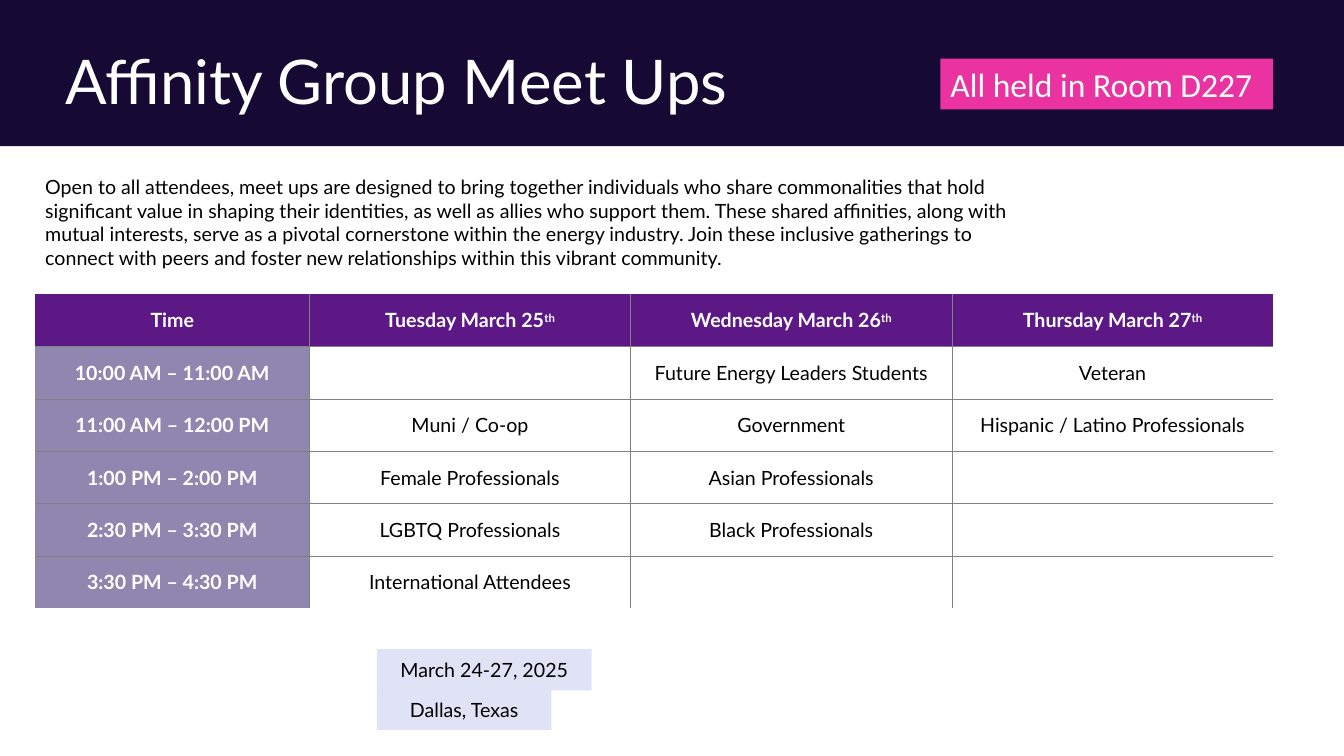
import pptx
import pptx.util
import pptx.dml.color
import pptx.enum.shapes
import pptx.enum.text
import pptx.oxml.ns
from lxml import etree

Pt = pptx.util.Pt
ALIGN = pptx.enum.text.PP_ALIGN
ANCHOR = pptx.enum.text.MSO_ANCHOR

COLORS = {
    "navy": "160A34", "purple": "5C1986", "lavender": "9087B0", "pale": "E0E3F6",
    "pink": "EA32A0", "white": "FFFFFF", "black": "000000", "grid": "808080",
}

TITLE = "Affinity Group Meet Ups"
ROOM = "All held in Room D227"
INTRO = (
    "Open to all attendees, meet ups are designed to bring together individuals who share "
    "commonalities that hold significant value in shaping their identities, as well as allies "
    "who support them. These shared affinities, along with mutual interests, serve as a pivotal "
    "cornerstone within the energy industry. Join these inclusive gatherings to connect with "
    "peers and foster new relationships within this vibrant community."
)
# Each heading is its text and its superscript ending
HEADINGS = [("Time", ""), ("Tuesday March 25", "th"),
            ("Wednesday March 26", "th"), ("Thursday March 27", "th")]
SCHEDULE = [
    ("10:00 AM – 11:00 AM", "", "Future Energy Leaders Students", "Veteran"),
    ("11:00 AM – 12:00 PM", "Muni / Co-op", "Government", "Hispanic / Latino Professionals"),
    ("1:00 PM – 2:00 PM", "Female Professionals", "Asian Professionals", ""),
    ("2:30 PM – 3:30 PM", "LGBTQ Professionals", "Black Professionals", ""),
    ("3:30 PM – 4:30 PM", "International Attendees", "", ""),
]
# Text, left, top, width, height
EVENT_TAGS = [("March 24-27, 2025", 269.3, 463.7, 153.4, 29.5),
              ("Dallas, Texas", 269.3, 491.8, 124.6, 29.5)]

LEFT = 25.2
TABLE_TOP = 210.2
ROW_HEIGHT = 37.4
COLUMN_WIDTHS = [195.8, 229.5, 229.5, 229.5]


def rgb(name):
    return pptx.dml.color.RGBColor.from_string(COLORS[name])


def add_span(para, text, size, color, font="Lato", bold=False, raised=False):
    span = para.add_run()
    span.text = text
    span.font.size = Pt(size)
    span.font.name = font
    span.font.bold = bold
    span.font.color.rgb = rgb(color)
    if raised:
        span.font._element.set("baseline", "30000")


def add_box(page, left, top, width, height, fill):
    box = page.shapes.add_shape(pptx.enum.shapes.MSO_SHAPE.RECTANGLE,
                                Pt(left), Pt(top), Pt(width), Pt(height))
    box.shadow.inherit = False
    box.fill.solid()
    box.fill.fore_color.rgb = rgb(fill)
    box.line.fill.background()
    return box


def write(box, text, size, color, align=ALIGN.LEFT, anchor=ANCHOR.TOP, font="Lato"):
    box.text_frame.word_wrap = True
    box.text_frame.vertical_anchor = anchor
    para = box.text_frame.paragraphs[0]
    para.alignment = align
    add_span(para, text, size, color, font)
    return para


def set_borders(cell, visible):
    """Draw the grid on the visible sides and clear the others."""
    qn = pptx.oxml.ns.qn
    properties = cell._tc.get_or_add_tcPr()
    for place, side in enumerate("LRTB"):
        line = etree.Element(qn(f"a:ln{side}"), w=str(Pt(0.5)))
        if side in visible:
            fill = etree.SubElement(line, qn("a:solidFill"))
            etree.SubElement(fill, qn("a:srgbClr"), val=COLORS["grid"])
        else:
            etree.SubElement(line, qn("a:noFill"))
        properties.insert(place, line)


def add_schedule(page):
    rows = [HEADINGS] + [[(text, "") for text in row] for row in SCHEDULE]
    last_row, last_column = len(rows) - 1, len(HEADINGS) - 1
    table = page.shapes.add_table(len(rows), len(HEADINGS), Pt(LEFT), Pt(TABLE_TOP),
                                  Pt(sum(COLUMN_WIDTHS)), Pt(ROW_HEIGHT * len(rows))).table
    table.first_row = table.horz_banding = False
    for column, width in zip(table.columns, COLUMN_WIDTHS):
        column.width = Pt(width)
    for r, row in enumerate(rows):
        table.rows[r].height = Pt(ROW_HEIGHT)
        for c, (text, ending) in enumerate(row):
            cell = table.cell(r, c)
            label = r == 0 or c == 0
            cell.fill.solid()
            cell.fill.fore_color.rgb = rgb("purple" if r == 0 else "lavender" if c == 0 else "white")
            cell.vertical_anchor = ANCHOR.MIDDLE
            cell.margin_left = cell.margin_right = Pt(5)
            cell.margin_top = cell.margin_bottom = Pt(0)
            inner = {"L": c > 0, "R": c < last_column, "T": r > 0, "B": r < last_row}
            set_borders(cell, [side for side in inner if inner[side]])
            para = cell.text_frame.paragraphs[0]
            para.alignment = ALIGN.CENTER
            color = "white" if label else "black"
            if text:
                add_span(para, text, 14, color, bold=label)
            if ending:
                add_span(para, ending, 14, color, bold=label, raised=True)


def main():
    deck = pptx.Presentation()
    deck.slide_width, deck.slide_height = Pt(960), Pt(540)
    page = deck.slides.add_slide(deck.slide_layouts[5])

    # Header band behind the title
    title = page.shapes.title
    band = add_box(page, 0, 0, 960, 104.4, "navy")
    title.element.addprevious(band.element)
    title.left, title.top, title.width, title.height = Pt(39.6), Pt(24.5), Pt(828), Pt(71.3)
    write(title, TITLE, 44, "white", anchor=ANCHOR.MIDDLE).line_spacing = 0.9

    # Date and place
    for text, *frame in EVENT_TAGS:
        write(add_box(page, *frame, "pale"), text, 14, "black", ALIGN.CENTER, ANCHOR.MIDDLE)

    # Timetable
    add_schedule(page)

    # Room label
    room = add_box(page, 671.8, 41.8, 237.6, 36.3, "pink")
    write(room, ROOM, 24, "white", font="Calibri")
    room.text_frame.word_wrap = False

    # Introduction on a translucent panel
    intro = add_box(page, LEFT, 121.7, 725.8, 74.9, "white")
    shade = intro.fill._xPr.find(".//" + pptx.oxml.ns.qn("a:srgbClr"))
    etree.SubElement(shade, pptx.oxml.ns.qn("a:alpha"), val="54000")
    write(intro, INTRO, 14, "black")

    deck.save("out.pptx")


if __name__ == "__main__":
    main()
